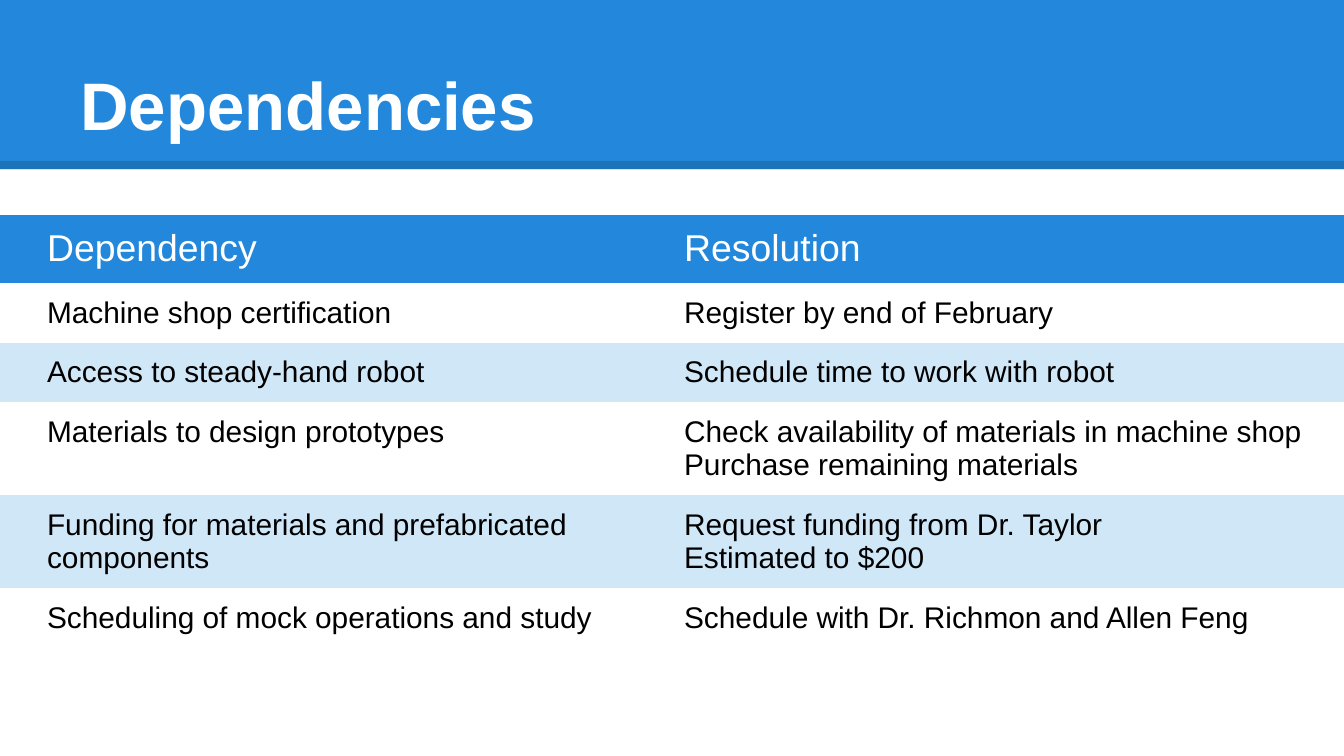
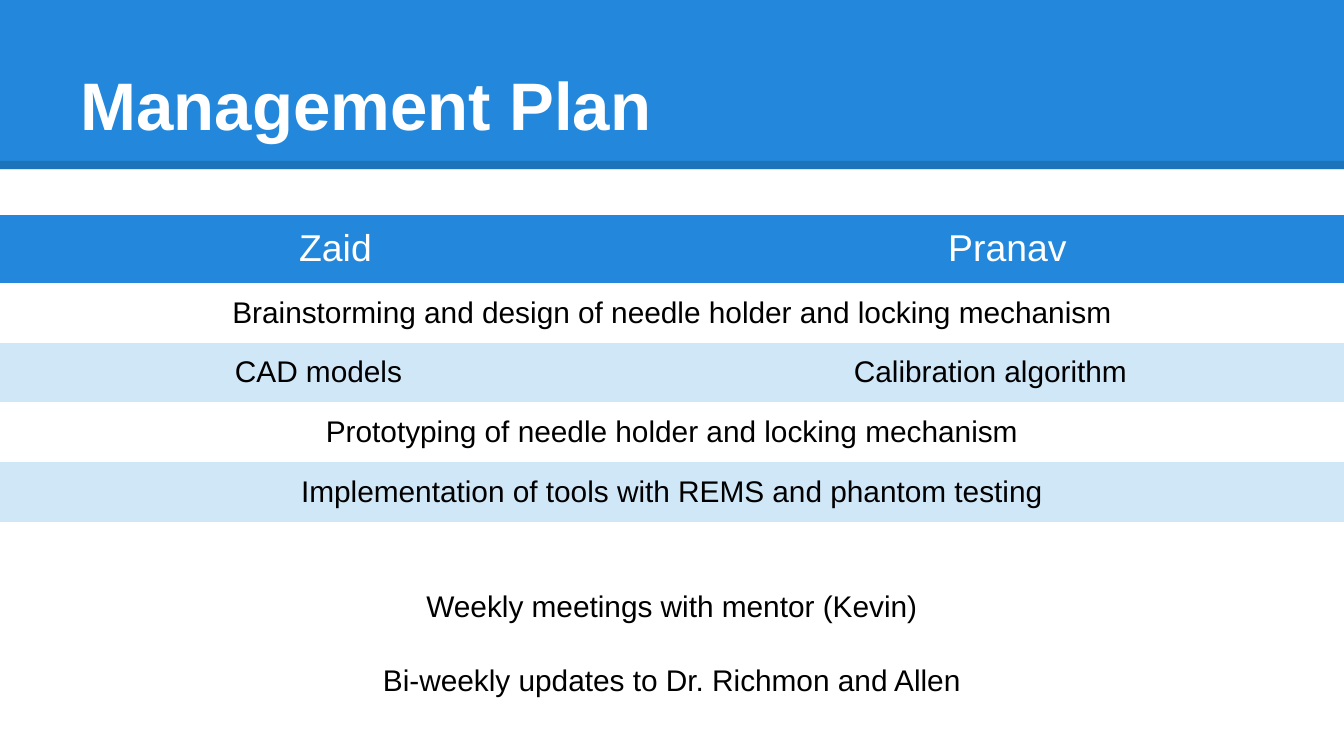
from lxml.etree import SubElement
from pptx import Presentation
from pptx.dml.color import RGBColor
from pptx.enum.shapes import MSO_CONNECTOR, MSO_SHAPE
from pptx.enum.text import MSO_ANCHOR, MSO_AUTO_SIZE, PP_ALIGN as ALIGN
from pptx.oxml.ns import qn
from pptx.util import Cm, Pt

# Content: a row with one entry spans both columns
DEPENDENCIES = [
    ("Dependency", "Resolution"),
    ("Machine shop certification", "Register by end of February"),
    ("Access to steady-hand robot", "Schedule time to work with robot"),
    ("Materials to design prototypes",
     "Check availability of materials in machine shop\nPurchase remaining materials"),
    ("Funding for materials and prefabricated components",
     "Request funding from Dr. Taylor\nEstimated to $200"),
    ("Scheduling of mock operations and study",
     "Schedule with Dr. Richmon and Allen Feng"),
]
MANAGEMENT = [
    ("Zaid", "Pranav"),
    ("Brainstorming and design of needle holder and locking mechanism",),
    ("CAD models", "Calibration algorithm"),
    ("Prototyping of needle holder and locking mechanism",),
    ("Implementation of tools with REMS and phantom testing",),
]
MEETINGS = ["Weekly meetings with mentor (Kevin)",
            "Bi-weekly updates to Dr. Richmon and Allen"]

# Shared style
BLUE = RGBColor(0x23, 0x88, 0xDB)
PALE = RGBColor(0xD0, 0xE7, 0xF8)
WHITE = RGBColor(0xFF, 0xFF, 0xFF)
BLACK = RGBColor(0, 0, 0)
FONT = "Arial"
NO_STYLE_NO_GRID = "{2D5ABB26-0587-4C30-8999-92F81FD0307C}"

WIDTH, HEIGHT = Cm(25.4), Cm(14.29)
MARGIN = Cm(1.27)
INSET = Cm(0.25)
INDENT = Cm(0.64)
BAND_HEIGHT, RULE_TOP = Cm(3.2), Cm(3.12)
TABLE_TOP, ROW_HEIGHT = Cm(4.06), Cm(1.07)
COLUMNS = (Cm(12.04), Cm(13.36))


def style_text(frame, size, color, align, bold=False):
    for paragraph in frame.paragraphs:
        paragraph.alignment = align
        for run in paragraph.runs:
            font = run.font
            font.name, font.size, font.bold = FONT, Pt(size), bold
            font.color.rgb = color


def set_insets(target):
    target.margin_left = target.margin_right = INSET
    target.margin_top = target.margin_bottom = INSET


def add_titled_slide(prs, heading):
    slide = prs.slides.add_slide(prs.slide_layouts[5])
    shapes = slide.shapes

    # Band and translucent rule, kept behind the title
    band = shapes.add_shape(MSO_SHAPE.RECTANGLE, 0, 0, WIDTH, BAND_HEIGHT)
    band.shadow.inherit = False
    band.fill.solid()
    band.fill.fore_color.rgb = BLUE
    band.line.fill.background()
    rule = shapes.add_connector(MSO_CONNECTOR.STRAIGHT, 0, RULE_TOP, WIDTH, RULE_TOP)
    rule.line.width = Pt(4.5)
    rule.line.color.rgb = BLACK
    black = rule.element.find(".//" + qn("a:srgbClr"))
    SubElement(black, qn("a:alpha"), val="15000")
    SubElement(rule.element.spPr, qn("a:effectLst"))

    # Title
    title = shapes.title
    title.left, title.top, title.width, title.height = MARGIN, Cm(0.58), Cm(22.86), Cm(2.39)
    frame = title.text_frame
    frame.text = heading
    frame.auto_size = MSO_AUTO_SIZE.NONE
    frame.vertical_anchor = MSO_ANCHOR.BOTTOM
    set_insets(frame)
    style_text(frame, 36, WHITE, ALIGN.LEFT, bold=True)
    rule.element.addnext(title.element)
    return slide


def add_striped_table(slide, rows, align, indent_body):
    graphic = slide.shapes.add_table(len(rows), len(COLUMNS), 0, TABLE_TOP,
                                     WIDTH, ROW_HEIGHT * len(rows))
    table = graphic.table
    table.first_row = table.horz_banding = False
    graphic.element.find(".//" + qn("a:tableStyleId")).text = NO_STYLE_NO_GRID
    for column, width in zip(table.columns, COLUMNS):
        column.width = width

    for r, entries in enumerate(rows):
        header = r == 0
        for cell in table.rows[r].cells:
            if r % 2:
                cell.fill.background()
            else:
                cell.fill.solid()
                cell.fill.fore_color.rgb = BLUE if header else PALE
        if len(entries) == 1:
            table.cell(r, 0).merge(table.cell(r, 1))
        for c, entry in enumerate(entries):
            cell = table.cell(r, c)
            cell.text_frame.text = entry
            set_insets(cell)
            style_text(cell.text_frame, 20 if header else 16,
                       WHITE if header else BLACK, align)
            if header or indent_body:
                for paragraph in cell.text_frame.paragraphs:
                    paragraph._p.get_or_add_pPr().set("marL", str(INDENT))


def add_meetings(slide):
    box = slide.shapes.add_textbox(MARGIN, Cm(10.82), Cm(22.86), Cm(2.57))
    frame = box.text_frame
    frame.word_wrap = True
    set_insets(frame)
    frame.text = "\n".join(MEETINGS)
    style_text(frame, 16, BLACK, ALIGN.CENTER)
    for paragraph in frame.paragraphs:
        paragraph.line_spacing = 1.07
    frame.paragraphs[1].space_before = Pt(19)


def main():
    prs = Presentation()
    prs.slide_width, prs.slide_height = WIDTH, HEIGHT

    dependencies = add_titled_slide(prs, "Dependencies")
    add_striped_table(dependencies, DEPENDENCIES, ALIGN.LEFT, indent_body=True)

    management = add_titled_slide(prs, "Management Plan")
    add_striped_table(management, MANAGEMENT, ALIGN.CENTER, indent_body=False)
    add_meetings(management)

    prs.save("out.pptx")


if __name__ == "__main__":
    main()
